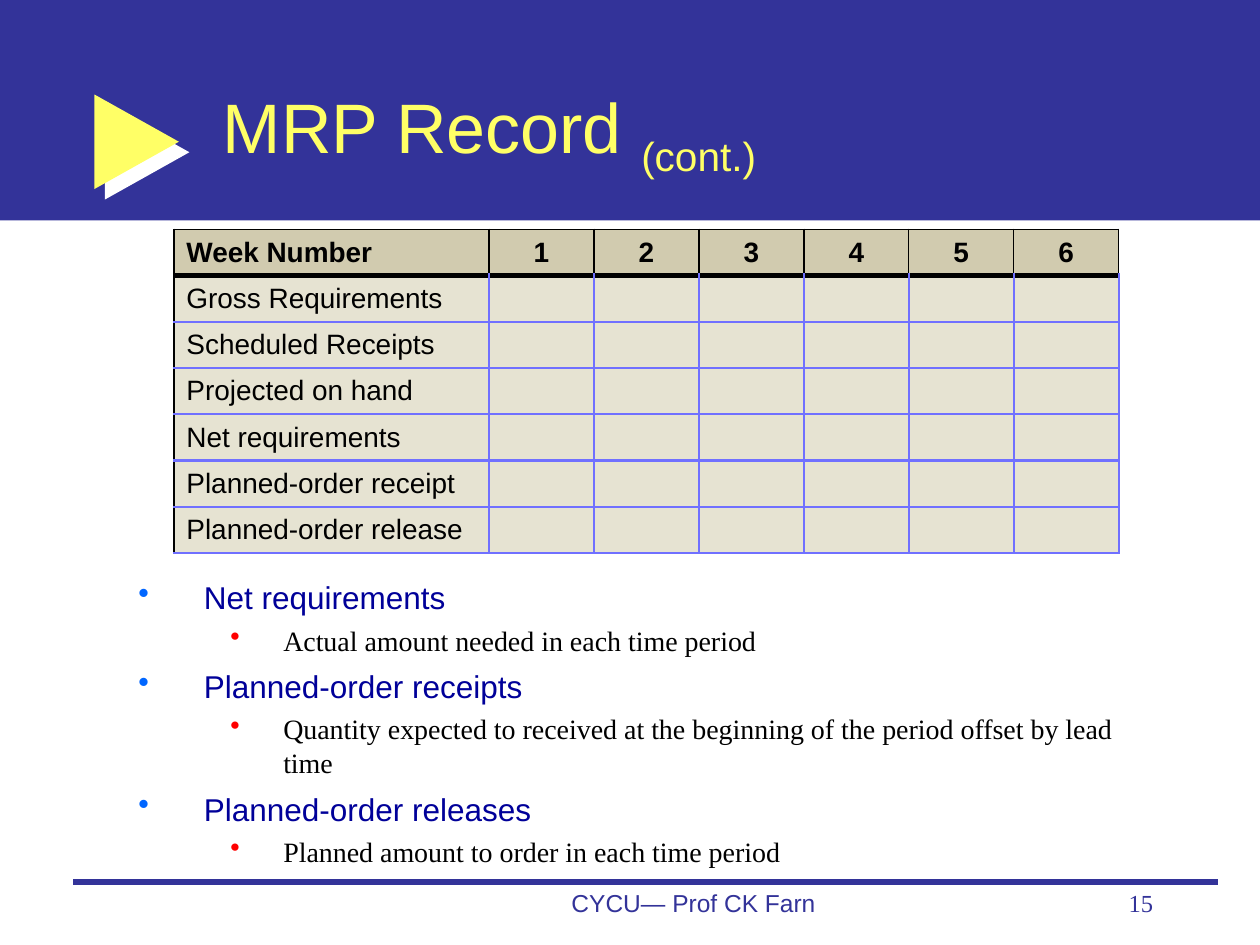
from dataclasses import dataclass

import lxml.etree
import pptx
import pptx.dml.color
import pptx.enum.shapes
import pptx.enum.text
import pptx.oxml
import pptx.oxml.ns
import pptx.util

Inches = pptx.util.Inches
Pt = pptx.util.Pt
qn = pptx.oxml.ns.qn
ALIGN = pptx.enum.text.PP_ALIGN
ANCHOR = pptx.enum.text.MSO_ANCHOR
SHAPE = pptx.enum.shapes.MSO_SHAPE


@dataclass(frozen=True)
class Theme:
    """Colours, fonts and type sizes of the slide."""
    navy: str = "333399"
    yellow: str = "FFFF66"
    white: str = "FFFFFF"
    black: str = "000000"
    heading: str = "000099"
    heading_bullet: str = "0066FF"
    detail_bullet: str = "FF0000"
    header_fill: str = "D1CBAF"
    body_fill: str = "E6E3D2"
    grid: str = "7070FF"
    sans: str = "Arial"
    serif: str = "Times New Roman"
    title_size: int = 40
    heading_size: int = 18
    text_size: int = 16
    footer_size: int = 14


@dataclass(frozen=True)
class Box:
    """A region in inches."""
    left: float
    top: float
    width: float
    height: float

    def inner(self, left, top, width, height):
        """Return a box placed relative to this one."""
        return Box(self.left + left, self.top + top, width, height)

    def lengths(self):
        """Return left, top, width and height as lengths."""
        return [Inches(n) for n in (self.left, self.top, self.width, self.height)]


THEME = Theme()
WEEKS = ["1", "2", "3", "4", "5", "6"]
RECORD_ROWS = ["Gross Requirements", "Scheduled Receipts", "Projected on hand",
               "Net requirements", "Planned-order receipt", "Planned-order release"]
DEFINITIONS = [
    ("Net requirements", "Actual amount needed in each time period"),
    ("Planned-order receipts",
     "Quantity expected to received at the beginning of the period offset by lead time"),
    ("Planned-order releases", "Planned amount to order in each time period"),
]


def rgb(colour):
    """Return a colour value from its hex digits."""
    return pptx.dml.color.RGBColor.from_string(colour)


def style(paragraph, size, face, colour, bold=False):
    """Set the font of a whole paragraph."""
    font = paragraph.font
    font.size, font.name, font.bold = Pt(size), face, bold
    font.color.rgb = rgb(colour)


def add_text_frame(slide, box, anchor=ANCHOR.TOP):
    """Add a wrapping text box and return its text frame."""
    frame = slide.shapes.add_textbox(*box.lengths()).text_frame
    frame.word_wrap = True
    frame.vertical_anchor = anchor
    return frame


def add_solid(slide, preset, box, colour):
    """Add a preset shape with a plain fill and no outline."""
    shape = slide.shapes.add_shape(preset, *box.lengths())
    shape.shadow.inherit = False
    shape.fill.solid()
    shape.fill.fore_color.rgb = rgb(colour)
    shape.line.fill.background()
    return shape


def add_title_band(slide, box):
    """Place the title band with its arrow and heading."""
    add_solid(slide, SHAPE.RECTANGLE, box, THEME.navy)
    arrow = add_solid(slide, SHAPE.RIGHT_ARROW, box.inner(0.75, 0.75, 0.67, 0.75), THEME.yellow)
    arrow.adjustments[0], arrow.adjustments[1] = 0.38, 1
    effects = arrow._element.spPr.find(qn("a:effectLst"))
    shadow = lxml.etree.SubElement(effects, qn("a:outerShdw"), dist=str(Pt(8.5)),
                                   dir="2700000", algn="ctr", rotWithShape="0")
    lxml.etree.SubElement(shadow, qn("a:srgbClr"), val=THEME.white)

    title = add_text_frame(slide, box.inner(1.67, 0.42, 7.58, 1.25), ANCHOR.MIDDLE).paragraphs[0]
    title.add_run().text = "MRP Record "
    continued = title.add_run()
    continued.text = "(cont.)"
    continued._r.get_or_add_rPr().set("baseline", "-25000")
    style(title, THEME.title_size, THEME.sans, THEME.yellow)


def set_borders(cell, **borders):
    """Draw the cell sides L, R, T and B, each a colour and a width."""
    properties = cell._tc.get_or_add_tcPr()
    for place, side in enumerate("LRTB"):
        colour, width = borders[side]
        line = pptx.oxml.parse_xml(
            f'<a:ln{side} {pptx.oxml.ns.nsdecls("a")} w="{Pt(width)}">'
            f'<a:solidFill><a:srgbClr val="{colour}"/></a:solidFill></a:ln{side}>')
        properties.insert(place, line)


def add_record_table(slide, box):
    """Place the MRP record with one column for each week."""
    rows = [["Week Number"] + WEEKS] + [[label] + [""] * len(WEEKS) for label in RECORD_ROWS]
    label_width = 2.5
    table = slide.shapes.add_table(len(rows), len(rows[0]), *box.lengths()).table
    for number, column in enumerate(table.columns):
        column.width = Inches((box.width - label_width) / len(WEEKS) if number else label_width)
    for row in table.rows:
        row.height = Inches(box.height / len(rows))

    thin, thick, grid = (THEME.black, 1), (THEME.black, 3), (THEME.grid, 1.5)
    for r, texts in enumerate(rows):
        for c, text in enumerate(texts):
            cell = table.cell(r, c)
            cell.vertical_anchor = ANCHOR.MIDDLE
            cell.fill.solid()
            cell.fill.fore_color.rgb = rgb(THEME.body_fill if r else THEME.header_fill)
            paragraph = cell.text_frame.paragraphs[0]
            if text:
                paragraph.add_run().text = text
                paragraph.alignment = ALIGN.CENTER if c else ALIGN.LEFT
                style(paragraph, THEME.text_size, THEME.sans, THEME.black, r == 0)
            else:
                paragraph._p.get_or_add_endParaRPr().set("sz", str(THEME.text_size * 100))
            if r == 0:
                set_borders(cell, L=thin, R=thin, T=thin, B=thick)
            else:
                set_borders(cell, L=grid if c else thin, R=grid,
                            T=thick if r == 1 else grid, B=grid)


def add_bullet(paragraph, level, margin, indent, colour):
    """Give a paragraph a hanging coloured bullet."""
    paragraph.level = level
    properties = paragraph._p.get_or_add_pPr()
    properties.set("marL", str(Inches(margin)))
    properties.set("indent", str(Inches(-indent)))
    bullet_colour = lxml.etree.SubElement(properties, qn("a:buClr"))
    lxml.etree.SubElement(bullet_colour, qn("a:srgbClr"), val=colour)
    lxml.etree.SubElement(properties, qn("a:buChar"), char="•")


def add_definitions(slide, box):
    """Place the defined terms, each with its explanation."""
    frame = add_text_frame(slide, box)
    for number, (term, meaning) in enumerate(DEFINITIONS):
        heading = frame.add_paragraph() if number else frame.paragraphs[0]
        heading.text = term
        if number:
            heading.space_before = Pt(6)
        add_bullet(heading, 0, 0.52, 0.52, THEME.heading_bullet)
        style(heading, THEME.heading_size, THEME.sans, THEME.heading)
        detail = frame.add_paragraph()
        detail.text = meaning
        detail.space_before = Pt(4)
        add_bullet(detail, 1, 1.15, 0.42, THEME.detail_bullet)
        style(detail, THEME.text_size, THEME.serif, THEME.black)


def add_footer(slide, box):
    """Place the rule, the author line and the page number."""
    left, top, width, _ = box.lengths()
    rule = slide.shapes.add_connector(pptx.enum.shapes.MSO_CONNECTOR.STRAIGHT,
                                      left, top, left + width, top)
    rule.line.color.rgb = rgb(THEME.navy)
    rule.line.width = Pt(3)
    lxml.etree.SubElement(rule._element.spPr, qn("a:effectLst"))
    for text, offset, span, alignment, face in (
            ("CYCU— Prof CK Farn", 3.34, 3.17, ALIGN.CENTER, THEME.sans),
            ("15", 6.59, 2.08, ALIGN.RIGHT, THEME.serif)):
        paragraph = add_text_frame(slide, box.inner(offset, 0, span, box.height)).paragraphs[0]
        paragraph.text = text
        paragraph.alignment = alignment
        style(paragraph, THEME.footer_size, face, THEME.navy)


def main():
    """Build the slide and save it."""
    deck = pptx.Presentation()
    deck.slide_width, deck.slide_height = Inches(10), Inches(7.5)
    slide = deck.slides.add_slide(deck.slide_layouts[6])
    add_title_band(slide, Box(0, 0, 10, 1.75))
    add_definitions(slide, Box(1, 4.54, 8, 2.45))
    add_record_table(slide, Box(1.38, 1.82, 7.5, 2.57))
    add_footer(slide, Box(0.58, 7, 9.09, 0.5))
    deck.save("out.pptx")


if __name__ == "__main__":
    main()
